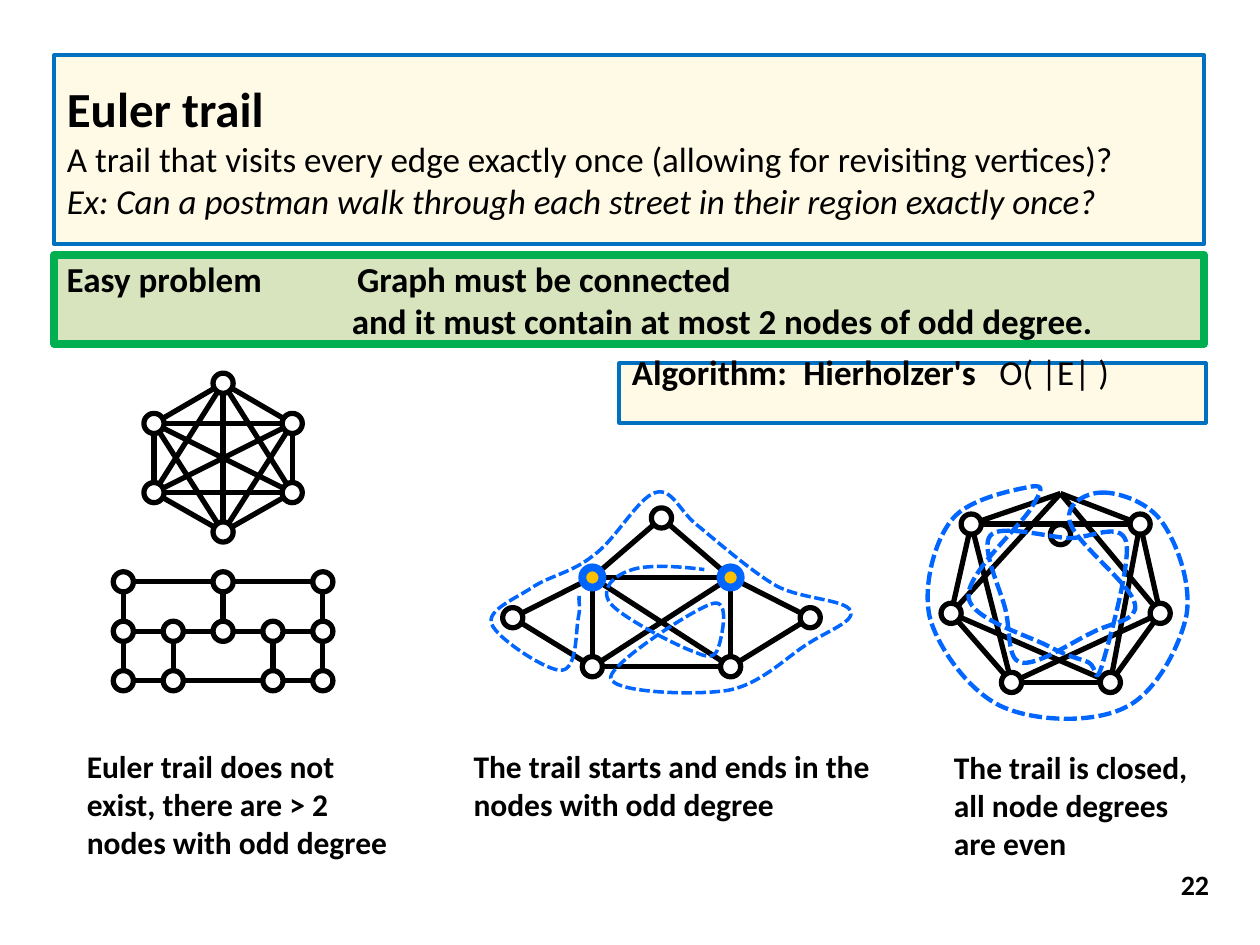
from dataclasses import dataclass
from itertools import combinations
from lxml.etree import SubElement
from pptx import Presentation
from pptx.dml.color import RGBColor as Rgb
from pptx.enum.dml import MSO_LINE as Dash
from pptx.enum.shapes import MSO_CONNECTOR as Link, MSO_SHAPE as Preset
from pptx.enum.text import MSO_ANCHOR as Anchor, MSO_AUTO_SIZE as Fit, PP_ALIGN as Align
from pptx.oxml.ns import qn
from pptx.util import Pt


@dataclass(frozen=True)
class Theme:
    """Colours, font and type sizes of the page."""
    font: str = "Calibri"
    ink: str = "000000"
    paper: str = "FFFFFF"
    cream: str = "FFFAE5"
    frame: str = "0070C0"
    green: str = "D7E4BD"
    green_frame: str = "00B050"
    trail: str = "0066FF"
    odd: str = "FFC000"
    heading: float = 28
    body: float = 20
    caption: float = 18
    number: float = 16


class Painter:
    """Holds the theme and the current page and draws each kind of element."""

    def __init__(self, theme, page):
        self.theme, self.page, self.shapes = theme, page, page.shapes

    def style(self, shape, fill, line, width):
        """Give a shape its fill and outline."""
        shape.fill.solid()
        shape.fill.fore_color.rgb = Rgb.from_string(fill)
        self.stroke(shape.line, line, width)

    def stroke(self, line, color, width):
        """Set the colour and width of a line."""
        line.color.rgb = Rgb.from_string(color)
        line.width = Pt(width)

    def fill_text(self, shape, paras, size, align=Align.LEFT, **frame_format):
        """Fill a shape with paragraphs, each a list of (text, font format) spans."""
        frame = shape.text_frame
        for name, value in frame_format.items():
            setattr(frame, name, value)
        for index, spans in enumerate(paras):
            para = frame.add_paragraph() if index else frame.paragraphs[0]
            para.alignment = align
            for text, changes in spans:
                span = para.add_run()
                span.text = text
                look = {"name": self.theme.font, "size": Pt(size), "bold": True} | changes
                for name, value in look.items():
                    setattr(span.font, name, value)
                span.font.color.rgb = Rgb.from_string(self.theme.ink)
        return frame.paragraphs

    def title(self, bounds, paras):
        """Place the title placeholder as a framed box."""
        box = self.shapes.title
        for name, value in zip(("left", "top", "width", "height"), bounds):
            setattr(box, name, Pt(value))
        self.style(box, self.theme.cream, self.theme.frame, 2.25)
        self.fill_text(box, paras, self.theme.body, vertical_anchor=Anchor.MIDDLE,
                       word_wrap=True, auto_size=Fit.NONE)

    def panel(self, bounds, paras, fill, line, width, **frame_format):
        """Draw a framed rectangle with text."""
        box = self.shapes.add_shape(Preset.RECTANGLE, *map(Pt, bounds))
        box.shadow.inherit = False
        self.style(box, fill, line, width)
        return self.fill_text(box, paras, self.theme.body, vertical_anchor=Anchor.MIDDLE,
                              word_wrap=True, **frame_format)

    def text(self, bounds, lines, size, align=Align.LEFT, **frame_format):
        """Add a plain text box with one paragraph for each line."""
        box = self.shapes.add_textbox(*map(Pt, bounds))
        self.fill_text(box, [[(line, {})] for line in lines], size, align, **frame_format)

    def tabs(self, para, *stops):
        """Set left tab stops on a paragraph."""
        tab_list = SubElement(para._p.get_or_add_pPr(), qn("a:tabLst"))
        for stop in stops:
            SubElement(tab_list, qn("a:tab"), pos=str(Pt(stop)), algn="l")

    def edge(self, start, end):
        """Draw one edge of a graph."""
        line = self.shapes.add_connector(Link.STRAIGHT, *map(Pt, (*start, *end)))
        self.stroke(line.line, self.theme.ink, 3)
        SubElement(line._element.spPr, qn("a:effectLst"))

    def node(self, center, odd=False):
        """Draw one node of a graph."""
        size = 11.5
        corner = [Pt(value - size / 2) for value in center]
        dot = self.shapes.add_shape(Preset.OVAL, *corner, Pt(size), Pt(size))
        dot.shadow.inherit = False
        look = (self.theme.odd, self.theme.trail, 4.5) if odd else (self.theme.paper, self.theme.ink, 3)
        self.style(dot, *look)

    def graph(self, edges, nodes, odd=()):
        """Draw the edges and then the nodes over them."""
        for start, end in edges:
            self.edge(start, end)
        for center in nodes:
            self.node(center, center in odd)

    def curve(self, start, bends, width, close=False):
        """Draw a dashed trail of cubic curves, six numbers for each bend."""
        points = [(Pt(x), Pt(y)) for bend in bends for x, y in zip(bend[::2], bend[1::2])]
        builder = self.shapes.build_freeform(*map(Pt, start))
        builder.add_line_segments(points, close=close)
        shape = builder.convert_to_shape()
        segments = list(shape._element.iter(qn("a:lnTo")))
        for first, second, third in zip(segments[::3], segments[1::3], segments[2::3]):
            bend = first.makeelement(qn("a:cubicBezTo"))
            first.addprevious(bend)
            for segment in (first, second, third):
                bend.append(segment[0])
                segment.getparent().remove(segment)
        shape.shadow.inherit = False
        shape.fill.background()
        self.stroke(shape.line, self.theme.trail, width)
        shape.line.dash_style = Dash.SQUARE_DOT


OPEN_TRAIL = [
    (330.5, 345.5, 332, 345.5, 330.5, 353), (329, 360, 330, 382.5, 321, 383),
    (313, 384, 283.5, 364.5, 281, 356.5), (278, 348.5, 295, 342, 304.5, 335.5),
    (314.5, 329, 327.5, 327, 339, 317.5), (351.5, 309, 364.5, 284.5, 374.5, 281.5),
    (384.5, 278.5, 388, 292.5, 399.5, 301), (411, 310.5, 430, 327, 444, 335),
    (458.5, 342.5, 483, 342.5, 486, 349), (489, 355, 473, 360.5, 461.5, 368),
    (450, 375, 435, 391, 416, 394.5), (397.5, 397.5, 350.5, 396, 349, 387.5),
    (348, 379.5, 396.5, 348, 407, 345), (417.5, 341.5, 412.5, 363.5, 411, 368.5),
    (409.5, 373.5, 408, 377.5, 398, 373), (387.5, 369.5, 355.5, 353, 349, 345),
    (342.5, 337, 350.5, 329, 360, 326), (368.5, 322.5, 387.5, 323.5, 402.5, 325.5)]
CLOSED_TRAIL = [
    (638, 281, 656.5, 286.5, 664.5, 299), (672.5, 310.5, 681, 333.5, 678, 351.5),
    (674.5, 368.5, 661, 395.5, 643.5, 404), (625.5, 413.5, 592, 412.5, 573, 404),
    (554.5, 396, 536.5, 371, 531.5, 353.5), (527, 335.5, 534, 309.5, 543.5, 297.5),
    (553, 284.5, 582, 279.5, 589.5, 278), (597, 277, 595.5, 280, 589.5, 290),
    (583, 301, 551.5, 328.5, 553.5, 341.5), (555, 354, 589, 363.5, 600.5, 370),
    (612, 376, 618, 376.5, 622, 378.5), (627, 381, 625.5, 392.5, 629.5, 381),
    (633, 369.5, 646.5, 322, 643.5, 309.5), (640, 297.5, 623, 308, 610, 307.5),
    (597, 306.5, 571.5, 299.5, 566, 306), (560, 312.5, 571.5, 336, 574.5, 348),
    (577.5, 360, 575.5, 376.5, 583, 378.5), (592, 381, 612.5, 367, 624, 361.5),
    (635, 355.5, 651, 355, 648.5, 345), (646.5, 334.5, 617, 312, 612, 300),
    (607, 288.5, 620.5, 281.5, 629.5, 281.5)]


def main():
    """Build the Euler trail page."""
    deck = Presentation()
    deck.slide_width, deck.slide_height = Pt(720), Pt(540)
    theme = Theme()
    painter = Painter(theme, deck.slides.add_slide(deck.slide_layouts[5]))

    painter.title((31, 31.5, 657, 108), [
        [("Euler trail", {"size": Pt(theme.heading)})],
        [("A trail that visits every edge exactly once (allowing for revisiting vertices)?", {"bold": False})],
        [("Ex: Can a postman walk through each street in their region exactly once?",
          {"bold": False, "italic": True})]])
    easy, condition = painter.panel((31, 145.5, 657, 51), [
        [("Easy problem\tGraph must be connected", {})],
        [("and it must contain at most 2 nodes of odd degree.", {})]], theme.green, theme.green_frame, 4.5)
    painter.tabs(easy, 166)
    condition._p.get_or_add_pPr().set("marL", str(Pt(163)))
    [algorithm] = painter.panel((354, 207.5, 335, 34), [
        [("Algorithm:\tHierholzer's", {}), ("\tO( |E| )", {"bold": False})]],
        theme.cream, theme.frame, 2.25, margin_bottom=Pt(28))
    painter.tabs(algorithm, 98, 210)

    hexagon = [(127.5, 219), (167, 242), (167, 281.5), (127.5, 304), (88, 281.5), (88, 242)]
    painter.graph(combinations(hexagon, 2), hexagon)

    cell = {(col, row): (70.5 + 28.5 * col, 332.5 + 28.25 * row) for col in range(5) for row in range(3)}
    walls = [(0, 0, 2), (4, 0, 2), (2, 0, 1), (1, 1, 2), (3, 1, 2)]
    edges = [(cell[0, row], cell[4, row]) for row in range(3)]
    edges += [(cell[col, top], cell[col, bottom]) for col, top, bottom in walls]
    gaps = {(1, 0), (3, 0), (2, 2)}
    painter.graph(edges, [center for key, center in cell.items() if key not in gaps])

    roof, left, right = (378, 296), (293, 353), (463, 353)
    square = upper_left, upper_right, lower_right, lower_left = [
        (338.5, 330), (417.5, 330), (417.5, 381), (338.5, 381)]
    edges = [*combinations(square, 2), (roof, upper_left), (roof, upper_right), (left, upper_left),
             (left, lower_left), (right, upper_right), (right, lower_right)]
    painter.graph(edges, [roof, left, right, *square], odd=(upper_left, upper_right))
    painter.curve((331, 340.5), OPEN_TRAIL, 2)

    ring = [(606, 282), (651.5, 299.5), (663, 350.5), (634.5, 390), (578, 390), (543.5, 350.5), (555, 299.5)]
    edges = [(ring[i], ring[(i + step) % 7]) for step in (1, 2) for i in range(7)]
    painter.graph(edges, [(606, 305.5), *ring[1:]])
    painter.curve((629.5, 281.5), CLOSED_TRAIL, 2.5, close=True)

    captions = [
        ((42.5, 423.5, 187, 73), ["Euler trail does not", "exist, there are > 2", "nodes with odd degree"]),
        ((263.5, 423.5, 243, 51), ["The trail starts and ends in the", "nodes with odd degree"]),
        ((538, 424, 153, 73), ["The trail is closed,", "all node degrees", "are even"])]
    for bounds, lines in captions:
        painter.text(bounds, lines, theme.caption, word_wrap=False, auto_size=Fit.SHAPE_TO_FIT_TEXT)
    painter.text((530, 491, 168, 29), ["22"], theme.number, Align.RIGHT,
                 vertical_anchor=Anchor.MIDDLE, word_wrap=True)
    deck.save("out.pptx")


if __name__ == "__main__":
    main()
